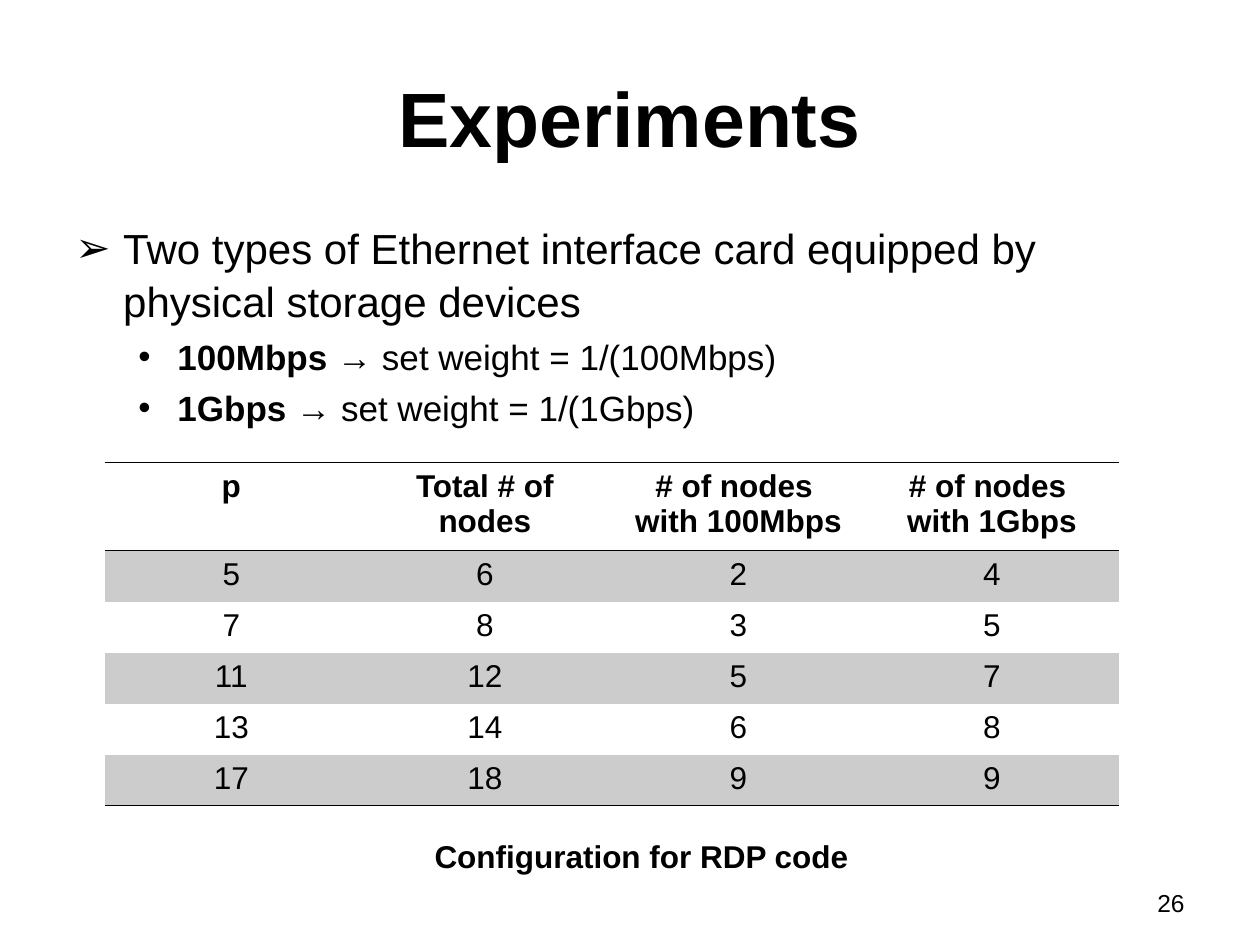
from lxml import etree
from pptx import Presentation
from pptx.dml.color import RGBColor
from pptx.enum import text
from pptx.oxml import ns
from pptx.util import Emu, Inches, Pt

COLORS = {"ink": "000000", "band": "CCCCCC"}
FONT = "Arial"
GRID_COLUMNS, GRID_ROWS = 20, 30
PLAIN_TABLE_STYLE = "{2D5ABB26-0587-4C30-8999-92F81FD0307C}"

HEADINGS = ["p", "Total # of nodes", "# of nodes \nwith 100Mbps", "# of nodes \nwith 1Gbps"]
NODE_COUNTS = [(5, 6, 2, 4), (7, 8, 3, 5), (11, 12, 5, 7), (13, 14, 6, 8), (17, 18, 9, 9)]
SPEEDS = [("100Mbps ", "→ set weight = 1/(100Mbps)"), ("1Gbps ", "→ set weight = 1/(1Gbps)")]

prs = Presentation()
prs.slide_width, prs.slide_height = Inches(10), Inches(7.5)


def grid_box(column, row, columns, rows):
    """Turn grid columns and rows into left, top, width and height."""
    unit_x, unit_y = prs.slide_width / GRID_COLUMNS, prs.slide_height / GRID_ROWS
    return [Emu(round(n)) for n in (column * unit_x, row * unit_y, columns * unit_x, rows * unit_y)]


def style(paragraph, size, bold=None, align=text.PP_ALIGN.LEFT):
    paragraph.alignment = align
    font = paragraph.font
    font.name, font.size, font.bold = FONT, Pt(size), bold
    font.color.rgb = RGBColor.from_string(COLORS["ink"])


def add_line(slide, box, words, size, bold=False, align=text.PP_ALIGN.LEFT,
             anchor=text.MSO_ANCHOR.TOP, wrap=True):
    frame = slide.shapes.add_textbox(*box).text_frame
    frame.word_wrap, frame.vertical_anchor = wrap, anchor
    frame.text = words
    style(frame.paragraphs[0], size, bold, align)


def set_bullet(paragraph, mark, margin, hanging):
    props = paragraph._p.get_or_add_pPr()
    props.set("marL", str(Inches(margin)))
    props.set("indent", str(-Inches(hanging)))
    etree.SubElement(props, ns.qn("a:buFont"), typeface=FONT)
    etree.SubElement(props, ns.qn("a:buChar"), char=mark)


def add_points(slide, box):
    frame = slide.shapes.add_textbox(*box).text_frame
    frame.word_wrap = True

    # Main point
    main = frame.paragraphs[0]
    main.text = "Two types of Ethernet interface card equipped by physical storage devices"
    main.line_spacing = 1.05
    style(main, 24)
    set_bullet(main, "➢", 0.38, 0.38)

    # One sub-point for each card speed
    for speed, weight in SPEEDS:
        point = frame.add_paragraph()
        point.level, point.line_spacing, point.space_before = 1, 1.05, Pt(4)
        style(point, 20)
        set_bullet(point, "•", 0.81, 0.31)
        for words, bold in ((speed, True), (weight, False)):
            run = point.add_run()
            run.text, run.font.bold = words, bold


def rule_cell(cell, side):
    """Draw a black rule on side T or B of a cell."""
    line = etree.Element(ns.qn(f"a:ln{side}"), w=str(Pt(1)))
    fill = etree.SubElement(line, ns.qn("a:solidFill"))
    etree.SubElement(fill, ns.qn("a:srgbClr"), val=COLORS["ink"])
    cell._tc.get_or_add_tcPr().insert(0, line)


def add_node_table(slide, box):
    rows = [HEADINGS] + NODE_COUNTS
    frame = slide.shapes.add_table(len(rows), len(HEADINGS), *box)
    table = frame.table
    table.first_row = table.horz_banding = False
    table._tbl.tblPr.find(ns.qn("a:tableStyleId")).text = PLAIN_TABLE_STYLE

    # The two-line header takes what the count rows leave
    count_height = round(box[3] * 0.15)
    for row in table.rows:
        row.height = count_height
    table.rows[0].height = box[3] - count_height * len(NODE_COUNTS)

    for r, values in enumerate(rows):
        for c, value in enumerate(values):
            cell = table.cell(r, c)
            cell.text = str(value)
            for paragraph in cell.text_frame.paragraphs:
                style(paragraph, 18, r == 0, text.PP_ALIGN.CENTER)
            if r % 2:
                cell.fill.solid()
                cell.fill.fore_color.rgb = RGBColor.from_string(COLORS["band"])
            else:
                cell.fill.background()
            if r in (0, len(rows) - 1):
                rule_cell(cell, "B")
            if r == 0:
                rule_cell(cell, "T")


def main():
    slide = prs.slides.add_slide(prs.slide_layouts[6])
    # Title
    add_line(slide, grid_box(1, 1.2, 18, 5), "Experiments", 44, True,
             text.PP_ALIGN.CENTER, text.MSO_ANCHOR.MIDDLE)
    # Points and page number
    add_points(slide, grid_box(1, 6.8, 18, 19.8))
    add_line(slide, grid_box(14.34, 28, 4.66, 1.4), "26", 14, align=text.PP_ALIGN.RIGHT)
    # Table and its caption
    add_node_table(slide, grid_box(1.66, 14.68, 16.1, 10.8))
    add_line(slide, grid_box(6.7, 26.36, 7.04, 1.6), "Configuration for RDP code", 18, True,
             wrap=False)
    prs.save("out.pptx")


if __name__ == "__main__":
    main()
